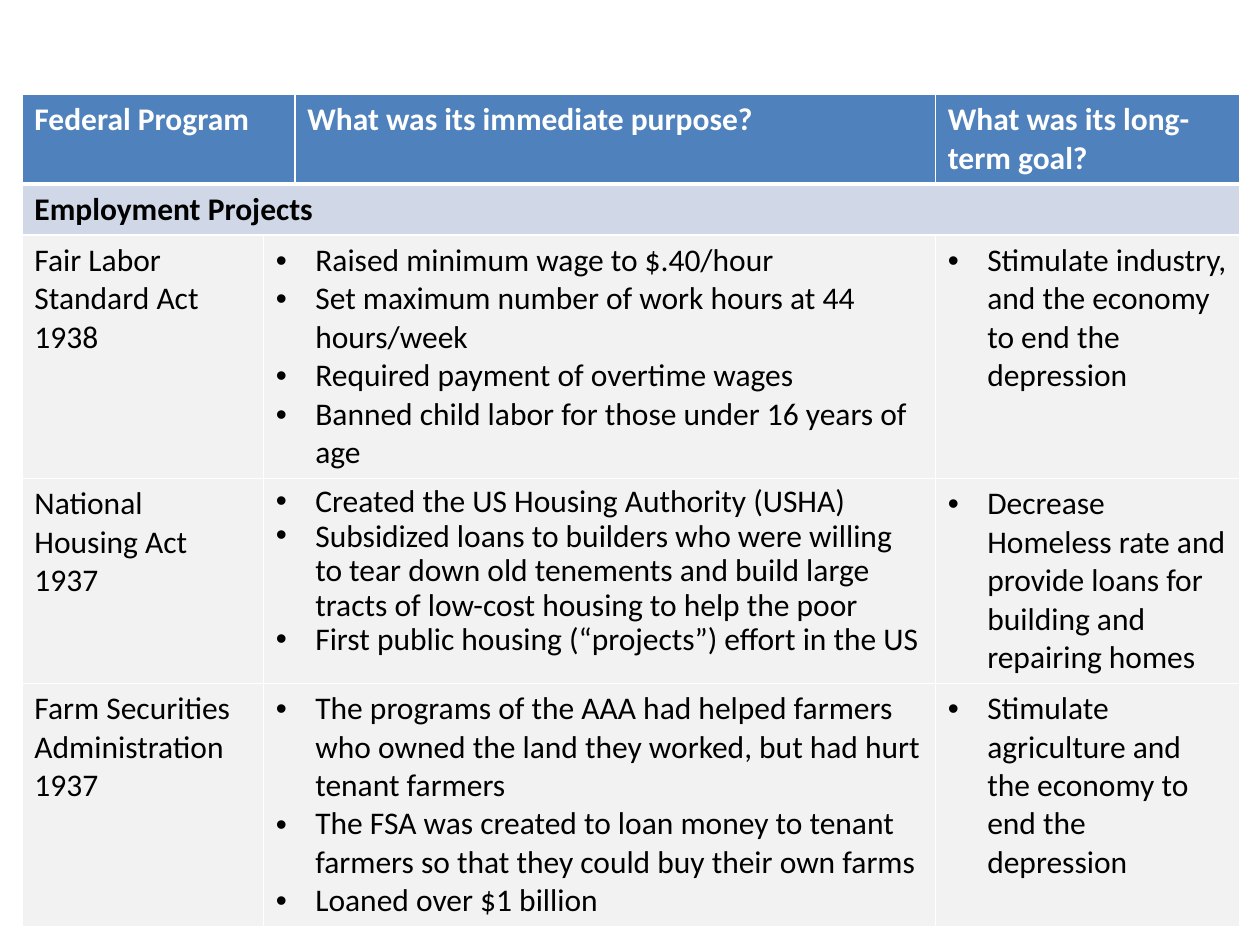
from dataclasses import dataclass

from lxml import etree
from pptx import Presentation
from pptx.dml.color import RGBColor
from pptx.oxml.ns import qn
from pptx.util import Pt


@dataclass(frozen=True)
class Theme:
    font: str = "Calibri"
    size: int = 18
    white: str = "FFFFFF"
    black: str = "000000"
    header: str = "4F81BD"
    section: str = "D0D8E8"
    body: str = "F2F2F2"
    indent: float = 22.5
    thin: int = 1
    thick: int = 3


THEME = Theme()
BLANK_LAYOUT = 6
EDGES = ("a:lnL", "a:lnR", "a:lnT", "a:lnB")


def write_cell(cell, lines, color=THEME.black, bold=False, bullets=False, spacing=None):
    """Write one paragraph per line, as a bulleted list if asked."""
    frame = cell.text_frame
    for index, line in enumerate(lines):
        para = frame.paragraphs[0] if index == 0 else frame.add_paragraph()
        if spacing:
            para.line_spacing = spacing
        if bullets:
            properties = para._p.get_or_add_pPr()
            properties.set("marL", str(Pt(THEME.indent)))
            properties.set("indent", str(-Pt(THEME.indent)))
            etree.SubElement(properties, qn("a:buFont"), typeface="Arial")
            etree.SubElement(properties, qn("a:buChar"), char="•")
        span = para.add_run()
        span.text = line
        span.font.name = THEME.font
        span.font.size = Pt(THEME.size)
        span.font.bold = bold
        span.font.color.rgb = RGBColor.from_string(color)


def style_cell(cell, fill, bottom=THEME.thin):
    """Draw the white grid lines, then fill the cell."""
    properties = cell._tc.get_or_add_tcPr()
    for edge in EDGES:
        width = bottom if edge == "a:lnB" else THEME.thin
        line = etree.SubElement(properties, qn(edge), w=str(Pt(width)))
        paint = etree.SubElement(line, qn("a:solidFill"))
        etree.SubElement(paint, qn("a:srgbClr"), val=THEME.white)
    cell.fill.solid()
    cell.fill.fore_color.rgb = RGBColor.from_string(fill)


# Content
headings = {
    0: "Federal Program",
    2: "What was its immediate purpose?",
    3: "What was its long-term goal?",
}
# Each program: name and year, purposes, goal, line spacing of the purposes
programs = [
    (
        ["Fair Labor Standard Act", "1938"],
        [
            "Raised minimum wage to $.40/hour",
            "Set maximum number of work hours at 44 hours/week",
            "Required payment of overtime wages",
            "Banned child labor for those under 16 years of age",
        ],
        "Stimulate industry, and the economy to end the depression",
        None,
    ),
    (
        ["National Housing Act", "1937"],
        [
            "Created the US Housing Authority (USHA)",
            "Subsidized loans to builders who were willing to tear down old "
            "tenements and build large tracts of low-cost housing to help the poor",
            "First public housing (“projects”) effort in the US",
        ],
        "Decrease Homeless rate and provide loans for building and repairing homes",
        0.9,
    ),
    (
        ["Farm Securities Administration", "1937"],
        [
            "The programs of the AAA had helped farmers who owned the land they "
            "worked, but had hurt tenant farmers",
            "The FSA was created to loan money to tenant farmers so that they "
            "could buy their own farms",
            "Loaned over $1 billion",
        ],
        "Stimulate agriculture and the economy to end the depression",
        None,
    ),
]

# Page
deck = Presentation()
deck.slide_width, deck.slide_height = Pt(720), Pt(540)
page = deck.slides.add_slide(deck.slide_layouts[BLANK_LAYOUT])

# Table grid
widths = [138, 18, 366, 174]
heights = [50.5, 29, 139, 117, 139]
table = page.shapes.add_table(
    len(heights), len(widths), Pt(12.5), Pt(54), Pt(sum(widths)), Pt(sum(heights))
).table
for column, width in zip(table.columns, widths):
    column.width = Pt(width)
for row, height in zip(table.rows, heights):
    row.height = Pt(height)

# Fills and grid lines
row_fills = [THEME.header, THEME.section] + [THEME.body] * len(programs)
for index, fill in enumerate(row_fills):
    for cell in table.rows[index].cells:
        style_cell(cell, fill, bottom=THEME.thick if index == 0 else THEME.thin)

# Header row
table.cell(0, 0).merge(table.cell(0, 1))
for column, heading in headings.items():
    write_cell(table.cell(0, column), [heading], color=THEME.white, bold=True)

# Section row
table.cell(1, 0).merge(table.cell(1, 3))
write_cell(table.cell(1, 0), ["Employment Projects"], bold=True)

# Program rows
for row, (name, purposes, goal, spacing) in enumerate(programs, start=2):
    table.cell(row, 1).merge(table.cell(row, 2))
    write_cell(table.cell(row, 0), name)
    write_cell(table.cell(row, 1), purposes, bullets=True, spacing=spacing)
    write_cell(table.cell(row, 3), [goal], bullets=True)

deck.save("out.pptx")
